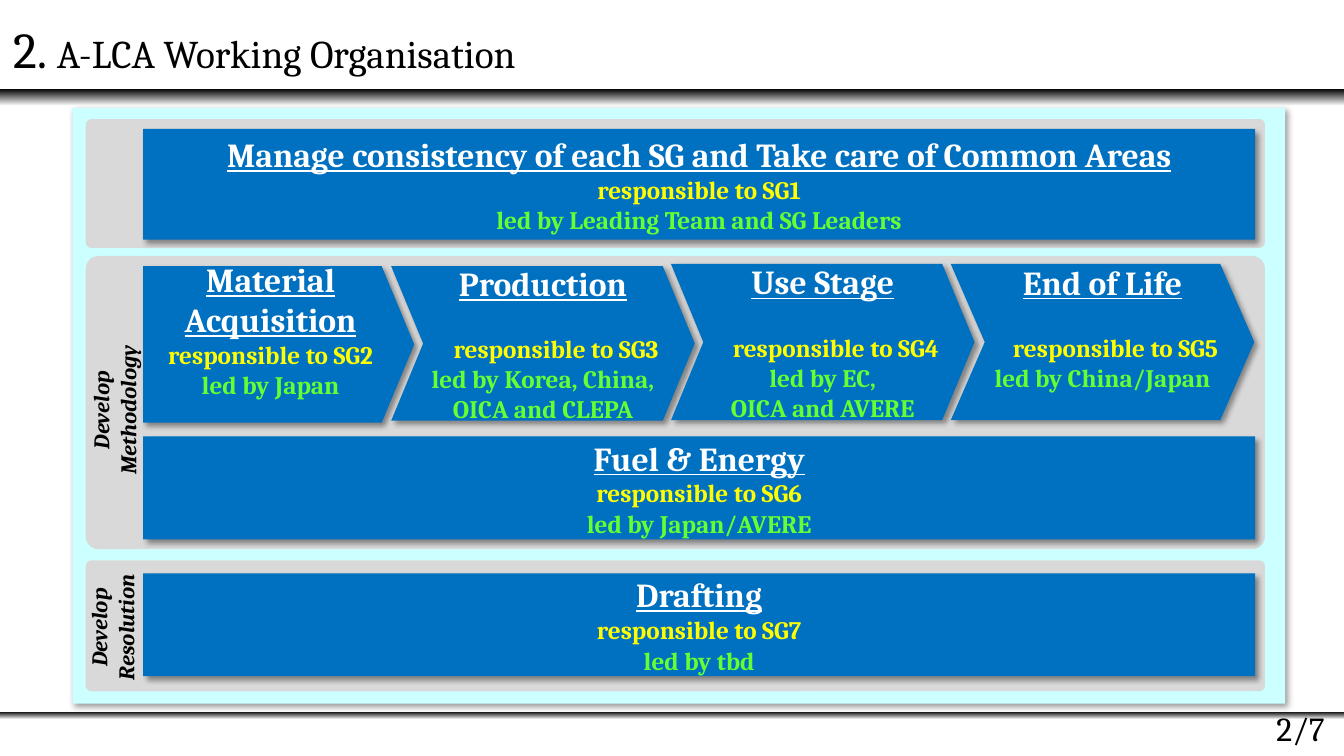
import pptx
import pptx.util
import pptx.dml.color
import pptx.enum.shapes
import pptx.enum.text
import pptx.oxml

Cm = pptx.util.Cm
Pt = pptx.util.Pt
SHAPE = pptx.enum.shapes.MSO_SHAPE
ALIGN = pptx.enum.text.PP_ALIGN
ANCHOR = pptx.enum.text.MSO_ANCHOR

FONT = "Cambria"
BLACK, WHITE, YELLOW, GREEN = "000000", "FFFFFF", "FFFF00", "66FF33"
BLUE, GREY, CYAN = "0070C0", "D9D9D9", "CCFFFF"
SLIDE_WIDTH, SLIDE_HEIGHT = 33.87, 19.05
GAP_LINE = 0.76

RULES = [(17.93, 0.2), (2.24, 0.43)]
PANEL = (1.83, 2.72, 30.56, 15.01)
GROUP_LEFT, GROUP_WIDTH = 2.16, 29.72
GROUPS = [(3.0, 3.25), (6.45, 7.39), (14.12, 3.3)]
BAND_LEFT, BAND_WIDTH = 3.61, 28.02
BANDS = [
    (3.25, 2.79, "Manage consistency of each SG and Take care of Common Areas",
     "responsible to SG1", "led by Leading Team and SG Leaders"),
    (11.0, 2.59, "Fuel & Energy", "responsible to SG6", "led by Japan/AVERE"),
    (14.45, 2.59, "Drafting", "responsible to SG7", "led by tbd"),
]
FIRST_STAGE = (["Material", "Acquisition"], "responsible to SG2", ["led by Japan"])
CHEVRON_LEFT, CHEVRON_PITCH, CHEVRON_WIDTH = 9.86, 7.05, 7.65
CHEVRONS = [
    (6.71, 3.89, 0.207, "Production", "responsible to SG3",
     ["led by Korea, China,", "OICA and CLEPA"]),
    (6.65, 3.94, 0.207, "Use Stage", "responsible to SG4",
     ["led by EC,", "OICA and AVERE"]),
    (6.65, 3.94, 0.218, "End of Life", "responsible to SG5",
     ["led by China/Japan"]),
]
SIDE_LABELS = [
    ((0.66, 9.52, 4.45, 1.63), ["Develop", "Methodology"]),
    ((0.97, 14.99, 3.73, 1.63), ["Develop", "Resolution"]),
]

SHADOW = (
    '<a:effectLst xmlns:a="http://schemas.openxmlformats.org/drawingml/2006/main">'
    '<a:outerShdw blurRad="50800" dist="38100" dir="2700000" algn="tl" rotWithShape="0">'
    '<a:srgbClr val="000000"><a:alpha val="40000"/></a:srgbClr>'
    '</a:outerShdw></a:effectLst>'
)


def colour(value):
    return pptx.dml.color.RGBColor.from_string(value)


def add_text(paragraph, text, size=18, color=BLACK, bold=False, italic=False,
             underline=False, align=ALIGN.CENTER, before=0, indent=0):
    paragraph.alignment = align
    if before:
        paragraph.space_before = Cm(before)
    if indent:
        paragraph._p.get_or_add_pPr().set("marL", str(Cm(indent)))
    run = paragraph.add_run()
    run.text = text
    font = run.font
    font.name, font.size = FONT, Pt(size)
    font.bold, font.italic, font.underline = bold, italic, underline
    font.color.rgb = colour(color)


def add_block(slide, kind, box, fill=None, adjustment=None, shadow=False):
    shape = slide.shapes.add_shape(kind, *map(Cm, box))
    shape.line.fill.background()
    shape.shadow.inherit = False
    if fill:
        shape.fill.solid()
        shape.fill.fore_color.rgb = colour(fill)
    if adjustment is not None:
        shape.adjustments[0] = adjustment
    if shadow:
        properties = shape._element.spPr
        for effects in properties.findall(pptx.oxml.ns.qn("a:effectLst")):
            properties.replace(effects, pptx.oxml.parse_xml(SHADOW))
    return shape


def add_task(slide, kind, box, adjustment, titles, responsible, leaders,
             gap=0, indent=0, bottom=0):
    shape = add_block(slide, kind, box, BLUE, adjustment, shadow=True)
    frame = shape.text_frame
    frame.word_wrap = False
    frame.vertical_anchor = ANCHOR.MIDDLE
    frame.margin_bottom = Cm(0.13 + bottom)
    lines = [(title, dict(size=24, color=WHITE, underline=True)) for title in titles]
    lines.append((responsible, dict(color=YELLOW, before=gap, indent=indent)))
    lines += [(leader, dict(color=GREEN)) for leader in leaders]
    for index, (text, style) in enumerate(lines):
        paragraph = frame.add_paragraph() if index else frame.paragraphs[0]
        add_text(paragraph, text, bold=True, **style)


def add_box(slide, box, anchor, wrap=True):
    text_box = slide.shapes.add_textbox(*map(Cm, box))
    text_box.text_frame.word_wrap = wrap
    text_box.text_frame.vertical_anchor = anchor
    return text_box


def main():
    presentation = pptx.Presentation()
    presentation.slide_width, presentation.slide_height = Cm(SLIDE_WIDTH), Cm(SLIDE_HEIGHT)
    slide = presentation.slides.add_slide(presentation.slide_layouts[6])

    for top, height in RULES:
        rule = add_block(slide, SHAPE.RECTANGLE, (0, top, SLIDE_WIDTH, height))
        rule.fill.gradient()
        rule.fill.gradient_angle = 270
        for stop, color in zip(rule.fill.gradient_stops, (BLACK, WHITE)):
            stop.color.rgb = colour(color)

    add_block(slide, SHAPE.PENTAGON, PANEL, CYAN, 0, shadow=True)
    for top, height in GROUPS:
        add_block(slide, SHAPE.ROUNDED_RECTANGLE,
                  (GROUP_LEFT, top, GROUP_WIDTH, height), GREY, 0.044)

    title = add_box(slide, (0.08, 0.33, 33.78, 1.78), ANCHOR.BOTTOM).text_frame.paragraphs[0]
    add_text(title, "2. ", size=36, align=ALIGN.LEFT)
    add_text(title, "A-LCA Working Organisation", size=28, align=ALIGN.LEFT)
    page = add_box(slide, (29.82, 17.27, 3.81, 1.7), ANCHOR.BOTTOM).text_frame.paragraphs[0]
    add_text(page, "2/7", size=24, align=ALIGN.RIGHT)

    for top, height, name, responsible, leader in BANDS:
        add_task(slide, SHAPE.PENTAGON, (BAND_LEFT, top, BAND_WIDTH, height), 0,
                 [name], responsible, [leader])

    add_task(slide, SHAPE.PENTAGON, (BAND_LEFT, 6.71, 6.83, 3.94), 0.208,
             *FIRST_STAGE, bottom=GAP_LINE)
    for index, (top, height, point, name, responsible, leaders) in enumerate(CHEVRONS):
        left = CHEVRON_LEFT + index * CHEVRON_PITCH
        add_task(slide, SHAPE.CHEVRON, (left, top, CHEVRON_WIDTH, height), point,
                 [name], responsible, leaders, gap=GAP_LINE, indent=0.66,
                 bottom=GAP_LINE * (2 - len(leaders)))

    for box, words in SIDE_LABELS:
        label = add_box(slide, box, ANCHOR.TOP, wrap=False)
        label.rotation = 270
        for index, word in enumerate(words):
            frame = label.text_frame
            paragraph = frame.add_paragraph() if index else frame.paragraphs[0]
            add_text(paragraph, word, size=16, bold=True, italic=True)

    presentation.save("out.pptx")


if __name__ == "__main__":
    main()
